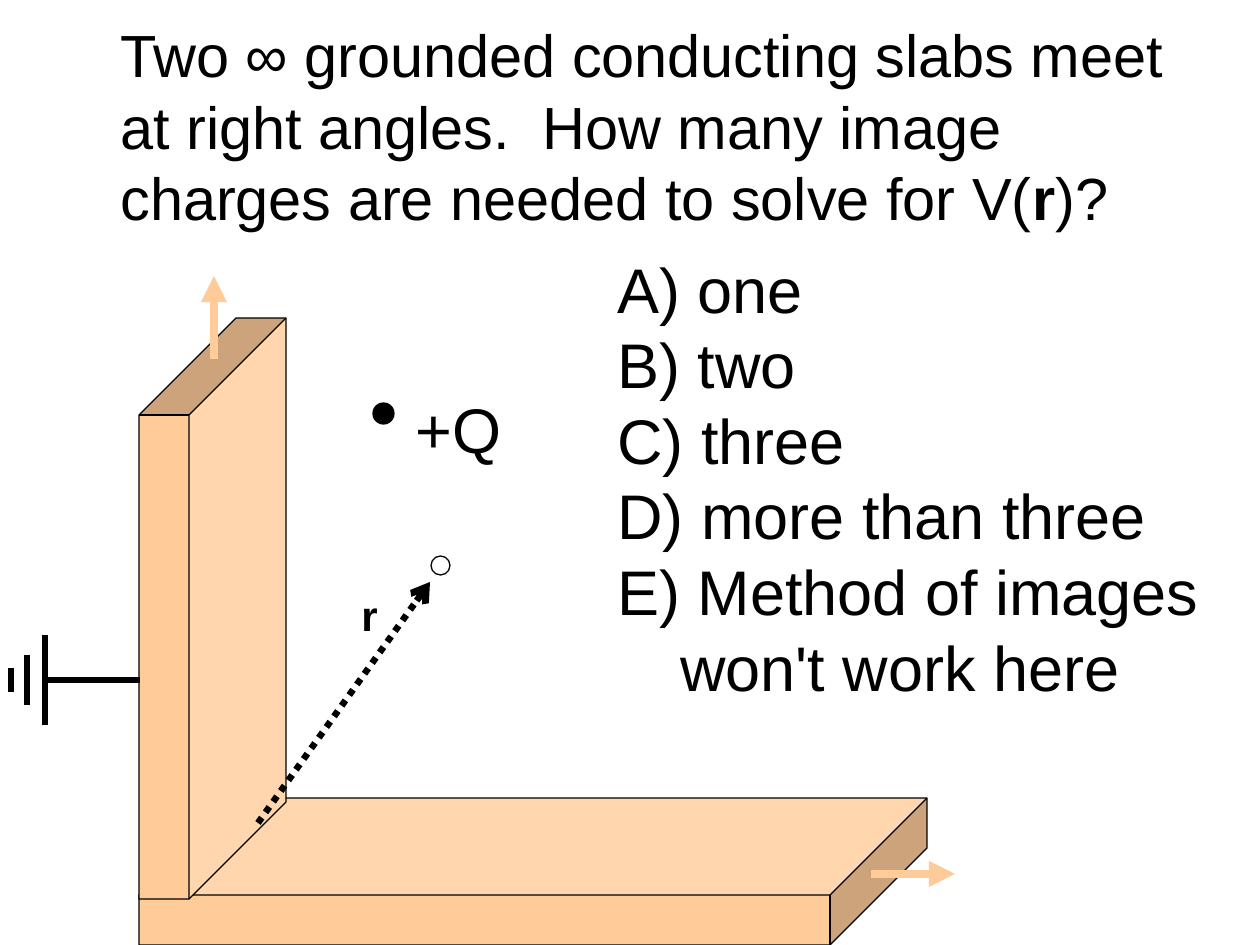
from dataclasses import dataclass

from lxml import etree
from pptx import Presentation
from pptx.dml.color import RGBColor
from pptx.enum.dml import MSO_LINE
from pptx.enum.shapes import MSO_CONNECTOR, MSO_SHAPE
from pptx.enum.text import MSO_ANCHOR
from pptx.oxml.ns import qn
from pptx.util import Emu, Pt

CUBE, OVAL = MSO_SHAPE.CUBE, MSO_SHAPE.OVAL
STRAIGHT = MSO_CONNECTOR.STRAIGHT
DOTTED = MSO_LINE.ROUND_DOT
TOP, MIDDLE = MSO_ANCHOR.TOP, MSO_ANCHOR.MIDDLE
PX_PER_INCH = 126


@dataclass(frozen=True)
class Theme:
    font: str = "Arial"
    ink: str = "000000"
    paper: str = "FFFFFF"
    slab: str = "FFCC99"
    title: int = 34
    body: int = 36
    label: int = 24
    outline: float = 0.75
    wire: float = 3
    vector: float = 3.75
    extent: float = 5


THEME = Theme()


def px(n):
    return Emu(round(n * 914400 / PX_PER_INCH))


def rgb(color):
    return RGBColor.from_string(color)


def add_text(s, box, paragraphs, size, bold=False, wrap=True, anchor=TOP, hang=0):
    """Each paragraph is a list of runs; every second run switches boldness."""
    tf = s.shapes.add_textbox(*map(px, box)).text_frame
    tf.word_wrap = wrap
    tf.vertical_anchor = anchor
    for i, runs in enumerate(paragraphs):
        p = tf.paragraphs[0] if i == 0 else tf.add_paragraph()
        if hang:
            pPr = p._p.get_or_add_pPr()
            pPr.set("marL", str(px(hang)))
            pPr.set("indent", str(-px(hang)))
        for j, text in enumerate(runs):
            r = p.add_run()
            r.text = text
            r.font.name = THEME.font
            r.font.size = Pt(size)
            r.font.bold = bold != bool(j % 2)
            r.font.color.rgb = rgb(THEME.ink)


def add_solid(s, kind, box, fill):
    sp = s.shapes.add_shape(kind, *map(px, box))
    sp.shadow.inherit = False
    sp.fill.solid()
    sp.fill.fore_color.rgb = rgb(fill)
    sp.line.color.rgb = rgb(THEME.ink)
    sp.line.width = Pt(THEME.outline)
    return sp


def add_slab(s, box, upright=False):
    sp = add_solid(s, CUBE, box, THEME.slab)
    sp.adjustments[0] = 0.66
    if upright:
        sp.rotation = 90
        sp._element.spPr.find(qn("a:xfrm")).set("flipH", "1")


def add_line(s, start, end, width, color=THEME.ink, dash=None, arrow=None):
    c = s.shapes.add_connector(STRAIGHT, *map(px, start + end))
    c.line.color.rgb = rgb(color)
    c.line.width = Pt(width)
    if dash:
        c.line.dash_style = dash
    if arrow:
        etree.SubElement(c.line._get_or_add_ln(), qn("a:tailEnd"), type=arrow)
    etree.SubElement(c._element.spPr, qn("a:effectLst"))


def add_ground(s, wall_x, y):
    """Wire from the wall to three bars that get shorter."""
    bars = [(45, 45), (27, 25), (11, 12)]
    add_line(s, (wall_x, y), (bars[0][0], y), THEME.wire)
    for x, half in bars:
        add_line(s, (x, y - half), (x, y + half), THEME.wire)


def main():
    prs = Presentation()
    prs.slide_width, prs.slide_height = px(1260), px(945)
    s = prs.slides.add_slide(prs.slide_layouts[6])

    # Question
    question = ["Two ∞ grounded conducting slabs meet at right angles.  "
                "How many image charges are needed to solve for V(", "r", ")?"]
    add_text(s, (108, 47, 1120, 157), [question], THEME.title, anchor=MIDDLE)

    # Conducting slabs
    add_slab(s, (139, 798, 788, 147))
    add_slab(s, (-78, 535, 581, 147), upright=True)

    # Charge
    add_text(s, (403, 384, 111, 88), [["+Q"]], THEME.body, wrap=False)
    add_solid(s, OVAL, (373, 403, 21, 21), THEME.ink)

    # Answers
    answers = ["A) one", "B) two", "C) three", "D) more than three",
               "E) Method of images won't work here"]
    add_text(s, (605, 244, 631, 466), [[a] for a in answers], THEME.body, hang=63)

    add_ground(s, 140, 680)

    # Position vector and field point
    add_line(s, (258, 823), (430, 582), THEME.vector, dash=DOTTED, arrow="arrow")
    add_solid(s, OVAL, (431, 556, 19, 19), THEME.paper)
    add_text(s, (349, 583, 42, 63), [["r"]], THEME.label, bold=True, wrap=False)

    # Slabs extend without end
    for start, end in [((214, 359), (214, 276)), ((871, 874), (955, 874))]:
        add_line(s, start, end, THEME.extent, THEME.slab, arrow="triangle")

    prs.save("out.pptx")


if __name__ == "__main__":
    main()
